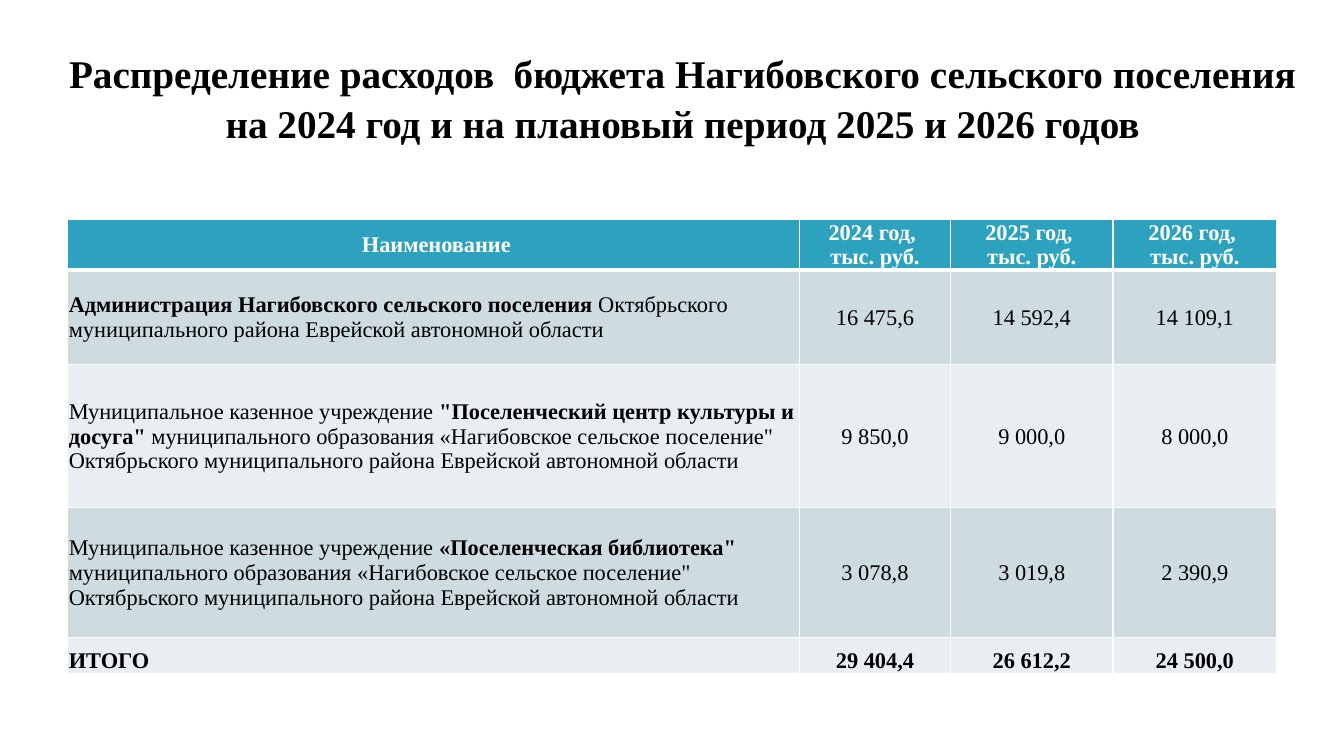
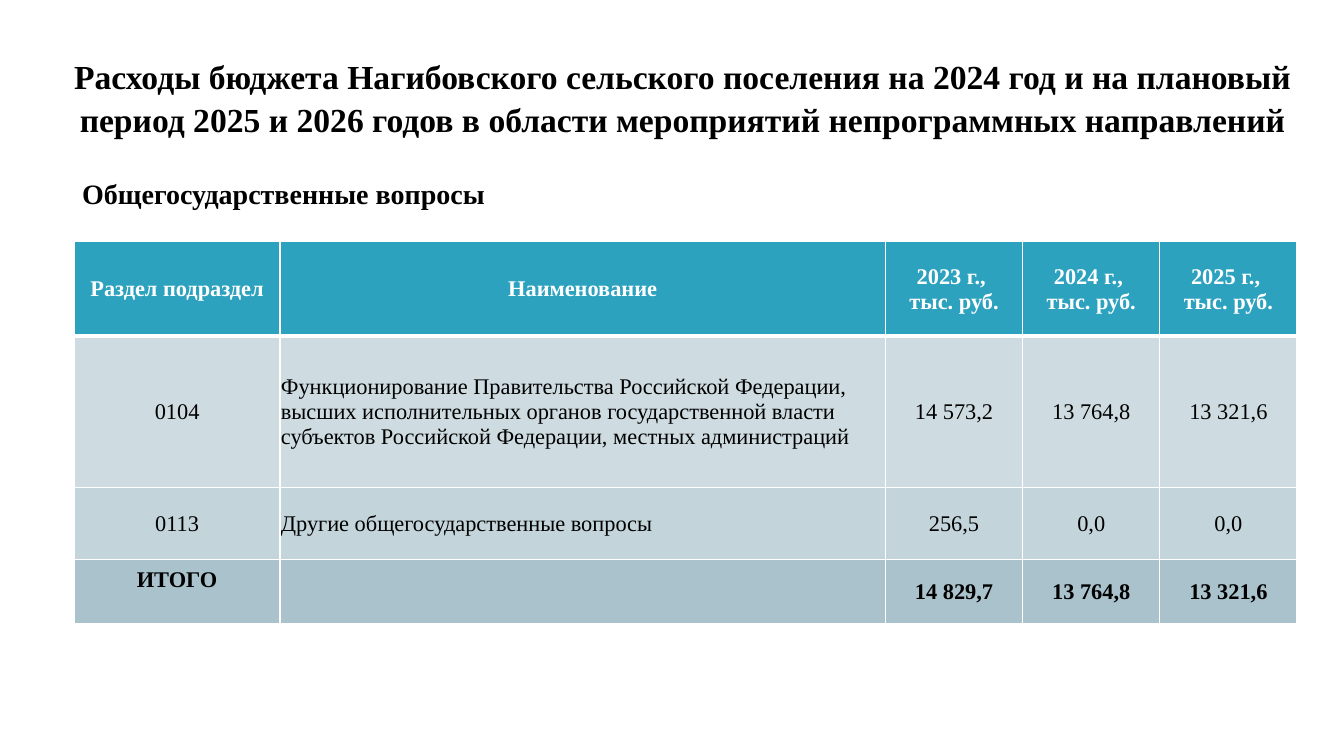
import pptx
import pptx.dml.color
import pptx.enum.text
import pptx.oxml
import pptx.oxml.ns
import pptx.util

Pt = pptx.util.Pt
ALIGN = pptx.enum.text.PP_ALIGN
ANCHOR = pptx.enum.text.MSO_ANCHOR

FONT = "Times New Roman"
TABLE_SIZE = 16
COLOURS = {
    "text": "000000",
    "white": "FFFFFF",
    "header": "2DA2BF",
    "band": "CEDCE1",
    "light": "E8EEF1",
    "column": "C3D5DB",
    "total": "A9C2CB",
}


def colour(name):
    return pptx.dml.color.RGBColor.from_string(COLOURS[name])


# Text
def add_run(paragraph, text, size, bold=False, colour_name="text"):
    run = paragraph.add_run()
    run.text = text
    run.font.name = FONT
    run.font.size = Pt(size)
    run.font.bold = bold
    run.font.color.rgb = colour(colour_name)


def place(shape, left, top, width, height):
    shape.left, shape.top = Pt(left), Pt(top)
    shape.width, shape.height = Pt(width), Pt(height)
    shape.text_frame.word_wrap = True
    shape.text_frame.auto_size = pptx.enum.text.MSO_AUTO_SIZE.NONE


def set_title(slide, text, size):
    title = slide.shapes.title
    place(title, 31.5, 36, 912, 66)
    title.text_frame.vertical_anchor = ANCHOR.MIDDLE
    paragraph = title.text_frame.paragraphs[0]
    paragraph.alignment = ALIGN.CENTER
    paragraph.line_spacing = 1.05
    add_run(paragraph, text, size, bold=True)


def set_subheading(slide, text):
    body = slide.placeholders[1]
    place(body, 31.5, 122.5, 913, 356)
    paragraph = body.text_frame.paragraphs[0]
    properties = paragraph._p.get_or_add_pPr()
    properties.set("marL", str(Pt(20)))
    properties.set("indent", "0")
    properties.append(pptx.oxml.parse_xml(
        f'<a:buNone {pptx.oxml.ns.nsdecls("a")}/>'))
    paragraph.space_before = Pt(0)
    add_run(paragraph, text, 20, bold=True)


# Tables
def set_borders(cell, top, bottom):
    properties = cell._tc.get_or_add_tcPr()
    widths = {"lnL": 1, "lnR": 1, "lnT": top, "lnB": bottom}
    for position, (side, width) in enumerate(widths.items()):
        properties.insert(position, pptx.oxml.parse_xml(
            f'<a:{side} {pptx.oxml.ns.nsdecls("a")} w="{Pt(width)}">'
            f'<a:solidFill><a:srgbClr val="{COLOURS["white"]}"/></a:solidFill>'
            f'</a:{side}>'))


def fill_cell(cell, content, alignment, bold, text_colour):
    """Content is text, one paragraph a line, or a list of (text, bold) runs."""
    if isinstance(content, str):
        paragraphs = [[(line, bold)] for line in content.split("\n") if line]
    else:
        paragraphs = [content]
    frame = cell.text_frame
    for index, runs in enumerate(paragraphs):
        paragraph = frame.add_paragraph() if index else frame.paragraphs[0]
        paragraph.alignment = alignment
        for text, run_bold in runs:
            add_run(paragraph, text, TABLE_SIZE, run_bold, text_colour)


def add_table(slide, left, top, widths, heights, rows, fills, name_column):
    """The first row is the header and the last row the total."""
    table = slide.shapes.add_table(
        len(rows), len(widths), Pt(left), Pt(top),
        Pt(sum(widths)), Pt(sum(heights))).table
    table.horz_banding = False
    for column, width in zip(table.columns, widths):
        column.width = Pt(width)
    for row, height in zip(table.rows, heights):
        row.height = Pt(height)
    for row_index, row in enumerate(rows):
        header = row_index == 0
        bold = header or row_index == len(rows) - 1
        for column_index, content in enumerate(row):
            cell = table.cell(row_index, column_index)
            cell.margin_left = cell.margin_right = cell.margin_top = Pt(0.7)
            cell.margin_bottom = Pt(0)
            cell.vertical_anchor = ANCHOR.MIDDLE
            cell.fill.solid()
            cell.fill.fore_color.rgb = colour(fills[row_index])
            set_borders(cell, 3 if row_index == 1 else 1, 3 if header else 1)
            is_name = column_index == name_column and not header
            fill_cell(cell, content, ALIGN.LEFT if is_name else ALIGN.CENTER,
                      bold, "white" if header else "text")
    return table


# Slides
def add_distribution_slide(presentation):
    slide = presentation.slides.add_slide(presentation.slide_layouts[5])
    set_title(slide, "Распределение расходов  бюджета Нагибовского сельского "
              "поселения на 2024 год и на плановый период 2025 и 2026 годов", 28)
    institution = "Муниципальное казенное учреждение "
    district = "Октябрьского муниципального района Еврейской автономной области"
    municipality = ("муниципального образования «Нагибовское сельское "
                    "поселение\" " + district)
    rows = [
        [" Наименование"] + [f"{year} год, \nтыс. руб."
                             for year in (2024, 2025, 2026)],
        [[("Администрация Нагибовского сельского поселения ", True),
          (district, False)], "16 475,6", "14 592,4", "14 109,1"],
        [[(institution, False),
          ("\"Поселенческий центр культуры и досуга\" ", True),
          (municipality, False)], "9 850,0", "9 000,0", "8 000,0"],
        [[(institution, False), ("«Поселенческая библиотека\" ", True),
          (municipality, False)], "3 078,8", "3 019,8", "2 390,9"],
        ["ИТОГО", "29 404,4", "26 612,2", "24 500,0"],
    ]
    table = add_table(slide, 48.5, 156.5, [522.5, 108, 116, 117],
                      [35, 67.5, 102.5, 92.5, 26], rows,
                      ["header", "band", "light", "band", "light"], 0)
    for cell in table.rows[len(rows) - 1].cells:
        cell.vertical_anchor = ANCHOR.BOTTOM


def add_general_slide(presentation):
    slide = presentation.slides.add_slide(presentation.slide_layouts[1])
    set_title(slide, "Расходы бюджета Нагибовского сельского поселения на 2024 "
              "год и на плановый период 2025 и 2026 годов в области "
              "мероприятий непрограммных направлений", 24)
    set_subheading(slide, "Общегосударственные вопросы")
    rows = [
        ["Раздел подраздел", "Наименование"]
        + [f"{year} г., \nтыс. руб." for year in (2023, 2024, 2025)],
        ["0104", "Функционирование Правительства Российской Федерации, высших "
         "исполнительных органов государственной власти субъектов Российской "
         "Федерации, местных администраций",
         "14 573,2", "13 764,8", "13 321,6"],
        ["0113", "Другие общегосударственные вопросы", "256,5", "0,0", "0,0"],
        ["ИТОГО", "", "14 829,7", "13 764,8", "13 321,6"],
    ]
    table = add_table(slide, 53, 172.5, [147, 432.5, 98, 98, 98],
                      [67.5, 108, 51.5, 46], rows,
                      ["header", "band", "column", "total"], 1)
    # The total label sits above the middle of its cell
    table.cell(len(rows) - 1, 0).margin_bottom = Pt(17)


def main():
    presentation = pptx.Presentation()
    presentation.slide_width, presentation.slide_height = Pt(960), Pt(540)
    add_distribution_slide(presentation)
    add_general_slide(presentation)
    presentation.save("out.pptx")


if __name__ == "__main__":
    main()
